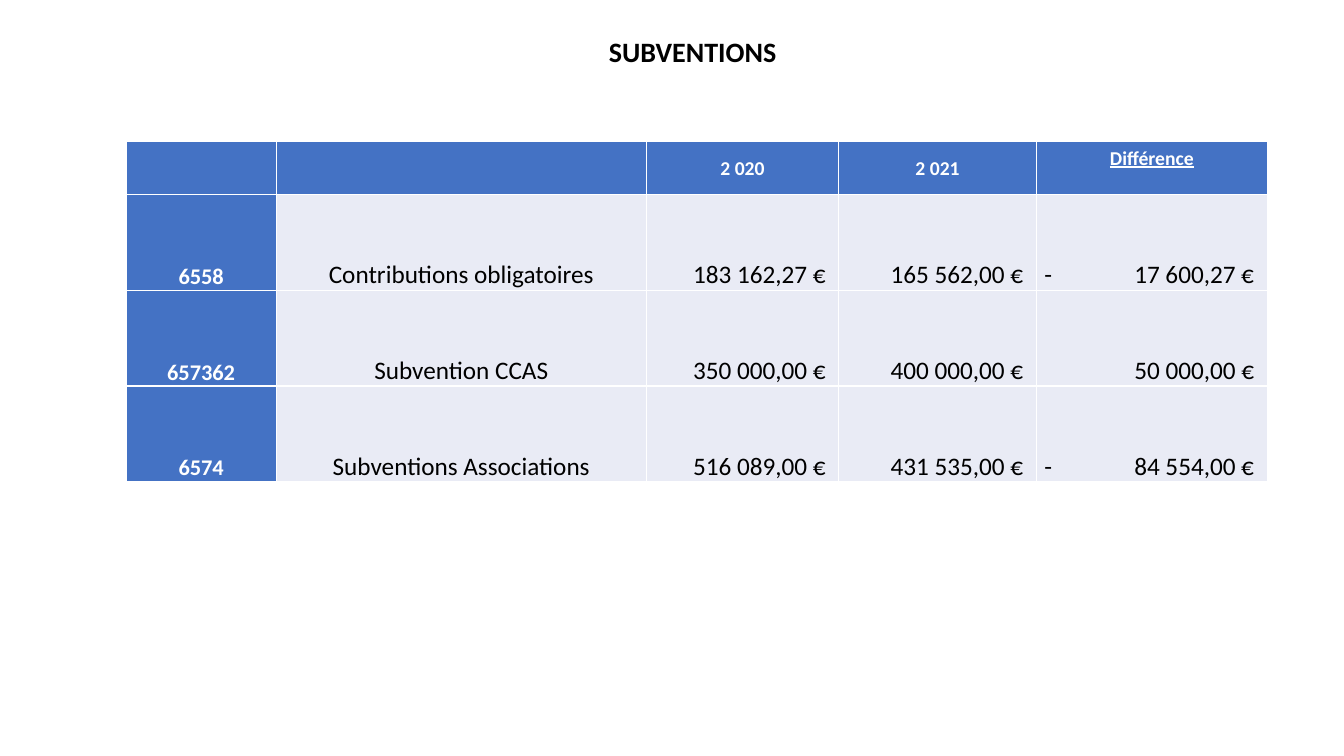
from lxml import etree
from pptx import Presentation
from pptx.dml.color import RGBColor
from pptx.enum.text import MSO_ANCHOR, PP_ALIGN
from pptx.oxml.ns import qn
from pptx.util import Inches, Pt

CENTER, RIGHT, LEFT = PP_ALIGN.CENTER, PP_ALIGN.RIGHT, PP_ALIGN.LEFT
MIDDLE, BOTTOM = MSO_ANCHOR.MIDDLE, MSO_ANCHOR.BOTTOM

COLORS = {"header": "4472C4", "body": "E9EBF5", "white": "FFFFFF", "black": "000000"}
FONT = "Calibri"

SLIDE_W, SLIDE_H = Inches(13.33), Inches(7.5)
GRID_COLS, GRID_ROWS = 1333, 750

COL_SPANS = [149, 367, 191, 196, 229]
ROW_SPANS = [53, 95, 95, 95]
EDGE = 1
AMOUNT_EDGE = 13
MINUS_EDGE = 8

HEADERS = ["", "", "2 020", "2 021", "Différence"]
ROWS = [
    ["6558", "Contributions obligatoires", "183 162,27 €", "165 562,00 €", "-\t17 600,27 €"],
    ["657362", "Subvention CCAS", "350 000,00 €", "400 000,00 €", "50 000,00 €"],
    ["6574", "Subventions Associations", "516 089,00 €", "431 535,00 €", "-\t84 554,00 €"],
]


def gx(n):
    return round(SLIDE_W * n / GRID_COLS)


def gy(n):
    return round(SLIDE_H * n / GRID_ROWS)


def write(tf, text, size=18, color="black", bold=False, underline=False, align=CENTER):
    p = tf.paragraphs[0]
    p.alignment = align
    r = p.add_run()
    r.text = text
    r.font.name = FONT
    r.font.size = Pt(size)
    r.font.bold = bold
    r.font.underline = underline
    r.font.color.rgb = RGBColor.from_string(COLORS[color])
    return p


def add_right_tab(p, pos):
    tabs = etree.SubElement(p._p.get_or_add_pPr(), qn("a:tabLst"))
    etree.SubElement(tabs, qn("a:tab"), pos=str(pos), algn="r")


def add_borders(cell, color="white", width=1):
    props = cell._tc.get_or_add_tcPr()
    for i, side in enumerate(("lnL", "lnR", "lnT", "lnB")):
        ln = etree.Element(qn(f"a:{side}"), w=str(Pt(width)))
        fill = etree.SubElement(ln, qn("a:solidFill"))
        etree.SubElement(fill, qn("a:srgbClr"), val=COLORS[color])
        props.insert(i, ln)


def style_cell(cell, fill, anchor=BOTTOM, left=EDGE, right=EDGE, bottom=0):
    cell.fill.solid()
    cell.fill.fore_color.rgb = RGBColor.from_string(COLORS[fill])
    cell.vertical_anchor = anchor
    cell.margin_left, cell.margin_right = gx(left), gx(right)
    cell.margin_top, cell.margin_bottom = gy(EDGE), gy(bottom)
    add_borders(cell)


def header_cell(cell, text):
    is_difference = text == HEADERS[-1]
    style_cell(cell, "header", BOTTOM if is_difference else MIDDLE,
               bottom=24 if is_difference else 0)
    if text:
        write(cell.text_frame, text, size=14, color="white", bold=True,
              underline=is_difference)


def code_cell(cell, text):
    style_cell(cell, "header")
    write(cell.text_frame, text, size=16, color="white", bold=True)


def label_cell(cell, text):
    style_cell(cell, "body")
    write(cell.text_frame, text)


def amount_cell(cell, text):
    negative = "\t" in text
    style_cell(cell, "body", left=MINUS_EDGE, right=AMOUNT_EDGE)
    p = write(cell.text_frame, text, align=LEFT if negative else RIGHT)
    if negative:
        add_right_tab(p, gx(COL_SPANS[-1] - MINUS_EDGE - AMOUNT_EDGE))


def add_title(s, text):
    sp = s.shapes.title
    sp.left, sp.top, sp.width, sp.height = gx(125), gy(29), gx(1124), gy(44)
    sp.text_frame.vertical_anchor = MIDDLE
    write(sp.text_frame, text, size=20, bold=True)


def add_subsidy_table(s):
    table = s.shapes.add_table(len(ROW_SPANS), len(COL_SPANS), gx(125), gy(140),
                               gx(sum(COL_SPANS)), gy(sum(ROW_SPANS))).table
    for column, span in zip(table.columns, COL_SPANS):
        column.width = gx(span)
    for row, span in zip(table.rows, ROW_SPANS):
        row.height = gy(span)
    for j, text in enumerate(HEADERS):
        header_cell(table.cell(0, j), text)
    fillers = [code_cell, label_cell, amount_cell, amount_cell, amount_cell]
    for i, values in enumerate(ROWS, 1):
        for j, (fill_cell, text) in enumerate(zip(fillers, values)):
            fill_cell(table.cell(i, j), text)


def main():
    prs = Presentation()
    prs.slide_width, prs.slide_height = SLIDE_W, SLIDE_H
    s = prs.slides.add_slide(prs.slide_layouts.get_by_name("Title Only"))
    add_subsidy_table(s)
    add_title(s, "SUBVENTIONS")
    prs.save("out.pptx")


if __name__ == "__main__":
    main()
